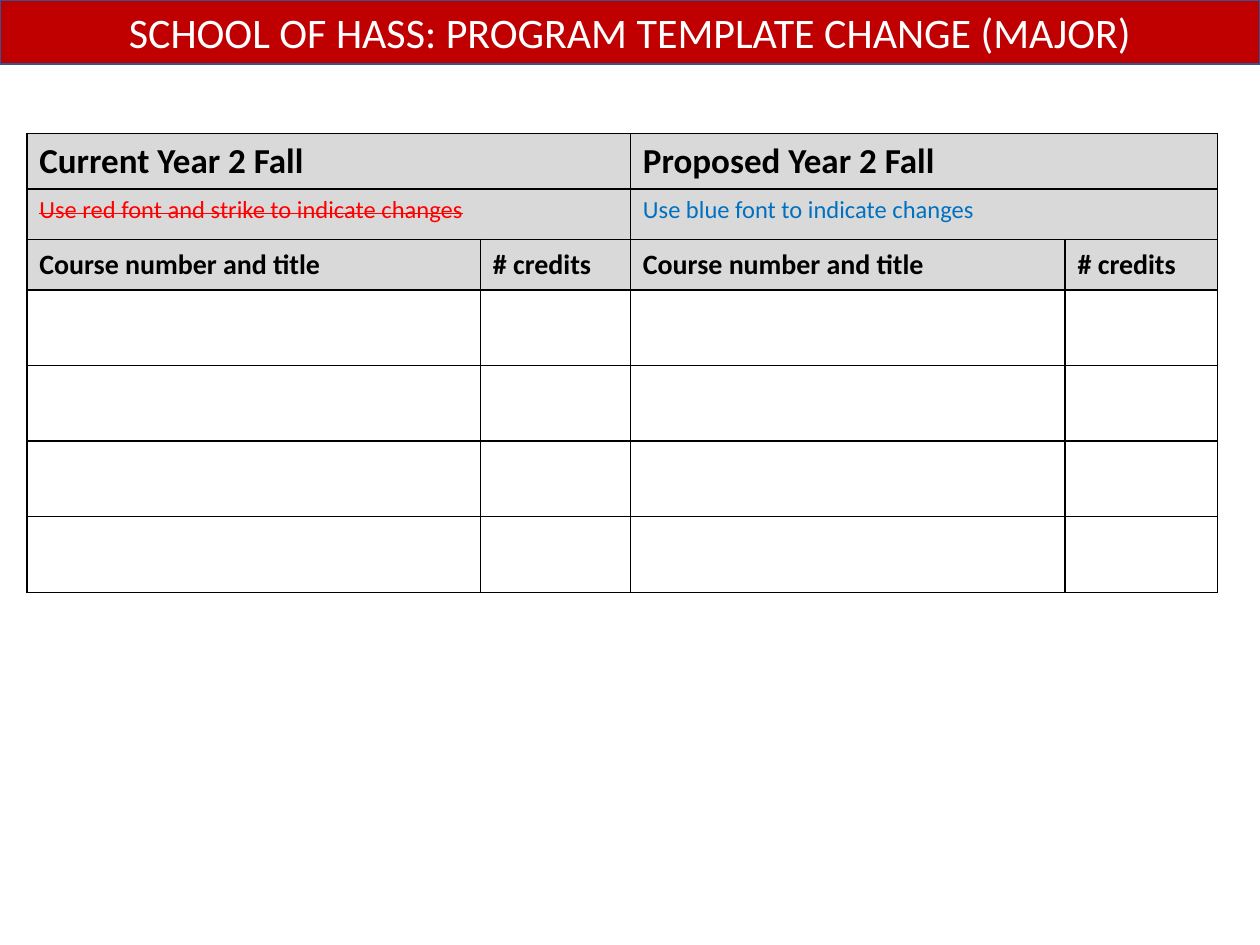
from lxml import etree
from pptx import Presentation
from pptx.dml.color import RGBColor
from pptx.enum import shapes, text
from pptx.oxml import ns
from pptx.util import Pt

FONT = "Calibri"
COLORS = {
    "banner": "C00000",
    "banner_line": "325491",
    "header": "D9D9D9",
    "white": "FFFFFF",
    "black": "000000",
    "removed": "FF0000",
    "added": "0070C0",
}
COLUMN_WIDTHS = [259.2, 85.7, 248.4, 87.1]
HEADER_HEIGHTS = [31, 28.8, 28.8]
COURSE_ROWS, COURSE_HEIGHT = 4, 43.2


def color(name):
    return RGBColor.from_string(COLORS[name])


def add_run(paragraph, words, size, color_name, bold=False, strike=False):
    run = paragraph.add_run()
    run.text = words
    run.font.name = FONT
    run.font.size = Pt(size)
    run.font.bold = bold
    run.font.color.rgb = color(color_name)
    if strike:
        run._r.get_or_add_rPr().set("strike", "sngStrike")


def add_banner(slide, words):
    banner = slide.shapes.add_shape(
        shapes.MSO_SHAPE.RECTANGLE, Pt(0), Pt(0), Pt(720), Pt(36.7))
    banner.shadow.inherit = False
    banner.fill.solid()
    banner.fill.fore_color.rgb = color("banner")
    banner.line.color.rgb = color("banner_line")
    banner.line.width = Pt(1)
    banner.text_frame.word_wrap = True
    banner.text_frame.vertical_anchor = text.MSO_ANCHOR.MIDDLE
    paragraph = banner.text_frame.paragraphs[0]
    paragraph.alignment = text.PP_ALIGN.CENTER
    add_run(paragraph, words, 24, "white")


def set_borders(cell):
    properties = cell._tc.get_or_add_tcPr()
    for side in ("a:lnL", "a:lnR", "a:lnT", "a:lnB"):
        line = etree.SubElement(properties, ns.qn(side), w=str(Pt(1)))
        fill = etree.SubElement(line, ns.qn("a:solidFill"))
        etree.SubElement(fill, ns.qn("a:srgbClr"), val=COLORS["black"])


def add_grid(slide):
    heights = HEADER_HEIGHTS + [COURSE_HEIGHT] * COURSE_ROWS
    frame = slide.shapes.add_table(
        len(heights), len(COLUMN_WIDTHS), Pt(15.3), Pt(76.3),
        Pt(sum(COLUMN_WIDTHS)), Pt(sum(heights)))
    table = frame.table
    table.first_row = table.horz_banding = False
    for column, width in zip(table.columns, COLUMN_WIDTHS):
        column.width = Pt(width)
    for index, height in enumerate(heights):
        table.rows[index].height = Pt(height)
        for cell in table.rows[index].cells:
            set_borders(cell)
            if index < len(HEADER_HEIGHTS):
                cell.fill.solid()
                cell.fill.fore_color.rgb = color("header")
            else:
                cell.fill.background()
    return table


def add_plan(table, first, title, hint, hint_color, strike):
    """Fill the header of one plan, which takes two columns."""
    for row in (0, 1):
        table.cell(row, first).merge(table.cell(row, first + 1))
    add_run(table.cell(0, first).text_frame.paragraphs[0], title, 20, "black", bold=True)
    add_run(table.cell(1, first).text_frame.paragraphs[0], hint, 14, hint_color, strike=strike)
    for offset, label in enumerate(("Course number and title", "# credits")):
        cell = table.cell(2, first + offset)
        cell.vertical_anchor = text.MSO_ANCHOR.MIDDLE
        add_run(cell.text_frame.paragraphs[0], label, 16, "black", bold=True)


def main():
    presentation = Presentation()
    presentation.slide_width, presentation.slide_height = Pt(720), Pt(540)
    slide = presentation.slides.add_slide(presentation.slide_layouts[6])

    # Course table: current plan on the left, proposed plan on the right
    table = add_grid(slide)
    add_plan(table, 0, "Current Year 2 Fall",
             "Use red font and strike to indicate changes", "removed", True)
    add_plan(table, 2, "Proposed Year 2 Fall",
             "Use blue font to indicate changes", "added", False)

    # Title banner
    add_banner(slide, "SCHOOL OF HASS: PROGRAM TEMPLATE CHANGE (MAJOR)")

    presentation.save("out.pptx")


if __name__ == "__main__":
    main()
